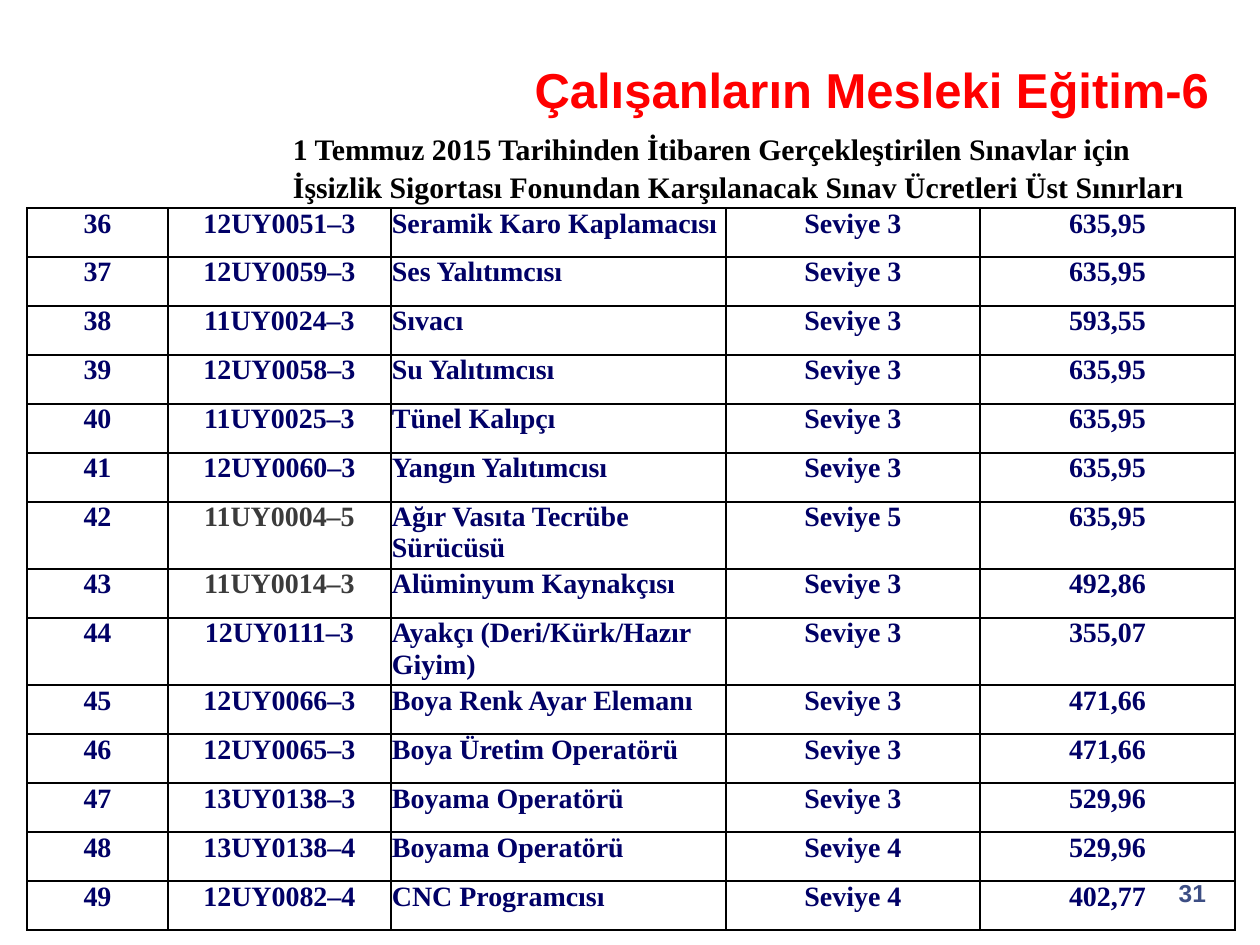
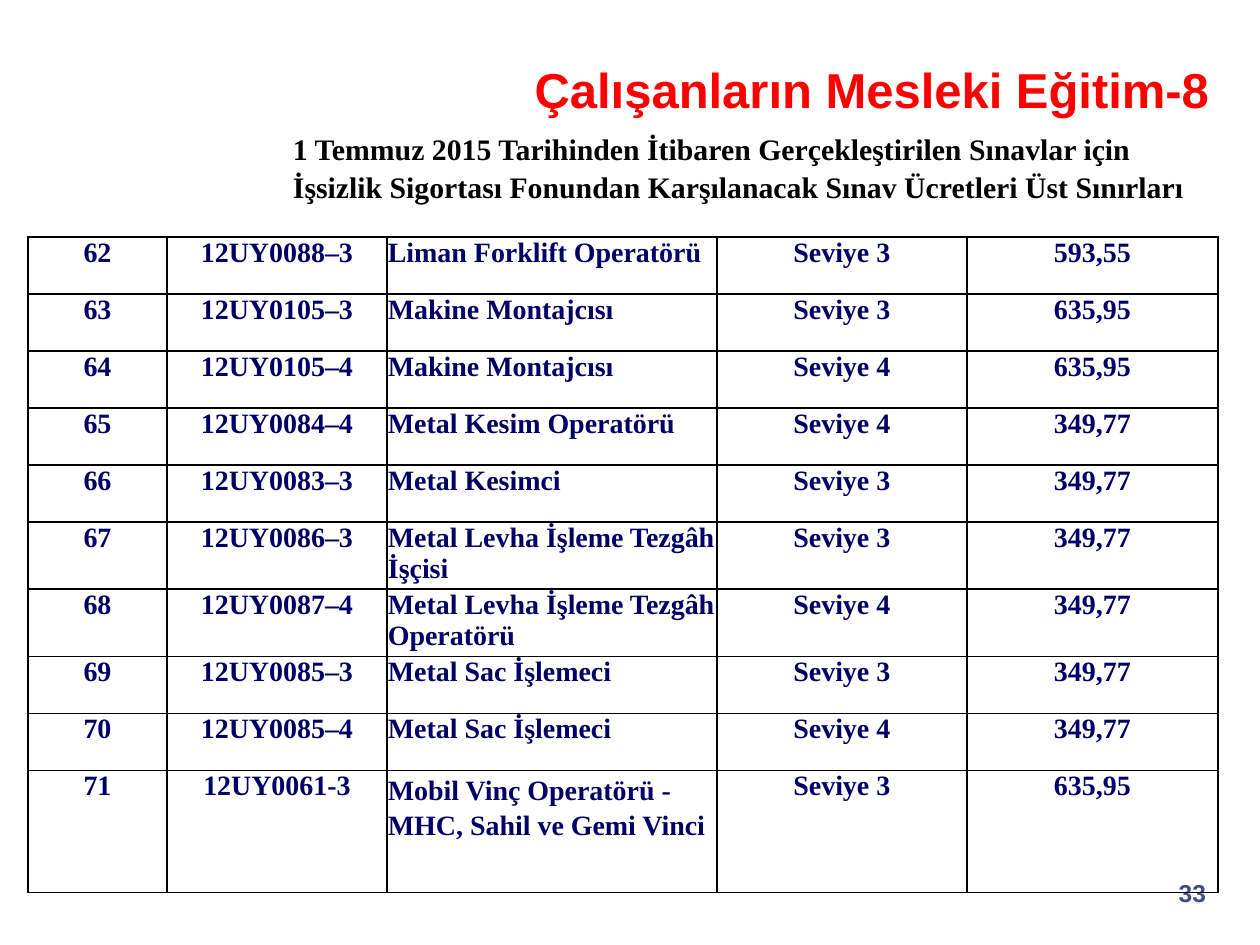
import pptx
import pptx.dml.color
import pptx.enum.text
import pptx.oxml
import pptx.oxml.ns
import pptx.util

RGB = pptx.dml.color.RGBColor
ALIGN = pptx.enum.text.PP_ALIGN
ANCHOR = pptx.enum.text.MSO_ANCHOR

RED = RGB(0xFF, 0x00, 0x00)
BLACK = RGB(0x00, 0x00, 0x00)
NAVY = RGB(0x00, 0x00, 0x66)
GREY = RGB(0x3B, 0x3B, 0x3B)
SLATE = RGB(0x3D, 0x4E, 0x84)

HEADING_FONT = "Arial"
BODY_FONT = "Times New Roman"
PX_PER_INCH = 126
SLIDE_SIZE = (1260, 945)

SUBTITLE = (
    "1 Temmuz 2015 Tarihinden İtibaren Gerçekleştirilen Sınavlar için "
    "İşsizlik Sigortası Fonundan Karşılanacak Sınav Ücretleri Üst Sınırları"
)
GREY_CODES = {"11UY0004–5", "11UY0014–3"}

# Qualification code, occupation, fee limit; the code ends in the level.
FEES_FROM_36 = [
    ("12UY0051–3", "Seramik Karo Kaplamacısı", "635,95"),
    ("12UY0059–3", "Ses Yalıtımcısı", "635,95"),
    ("11UY0024–3", "Sıvacı", "593,55"),
    ("12UY0058–3", "Su Yalıtımcısı", "635,95"),
    ("11UY0025–3", "Tünel Kalıpçı", "635,95"),
    ("12UY0060–3", "Yangın Yalıtımcısı", "635,95"),
    ("11UY0004–5", "Ağır Vasıta Tecrübe Sürücüsü", "635,95"),
    ("11UY0014–3", "Alüminyum Kaynakçısı", "492,86"),
    ("12UY0111–3", "Ayakçı (Deri/Kürk/Hazır Giyim)", "355,07"),
    ("12UY0066–3", "Boya Renk Ayar Elemanı", "471,66"),
    ("12UY0065–3", "Boya Üretim Operatörü", "471,66"),
    ("13UY0138–3", "Boyama Operatörü", "529,96"),
    ("13UY0138–4", "Boyama Operatörü", "529,96"),
    ("12UY0082–4", "CNC Programcısı", "402,77"),
]
FEES_FROM_62 = [
    ("12UY0088–3", "Liman Forklift Operatörü", "593,55"),
    ("12UY0105–3", "Makine Montajcısı", "635,95"),
    ("12UY0105–4", "Makine Montajcısı", "635,95"),
    ("12UY0084–4", "Metal Kesim Operatörü", "349,77"),
    ("12UY0083–3", "Metal Kesimci", "349,77"),
    ("12UY0086–3", "Metal Levha İşleme Tezgâh İşçisi", "349,77"),
    ("12UY0087–4", "Metal Levha İşleme Tezgâh Operatörü", "349,77"),
    ("12UY0085–3", "Metal Sac İşlemeci", "349,77"),
    ("12UY0085–4", "Metal Sac İşlemeci", "349,77"),
    ("12UY0061-3", "Mobil Vinç Operatörü - MHC, Sahil ve Gemi Vinci", "635,95"),
]


def px(length):
    return pptx.util.Emu(round(length * 914400 / PX_PER_INCH))


class Deck:
    """Holds the presentation, its style and the slide being filled."""

    def __init__(self):
        self.prs = pptx.Presentation()
        self.prs.slide_width, self.prs.slide_height = map(px, SLIDE_SIZE)
        self.slide = None

    def new_slide(self, title, number):
        self.slide = self.prs.slides.add_slide(self.prs.slide_layouts[6])
        self.text((427, 53, 808, 71), title, HEADING_FONT, 28, RED, ALIGN.RIGHT,
                  right=26, anchor=ANCHOR.MIDDLE)
        self.text((1147, 872, 72, 63), number, HEADING_FONT, 14, SLATE, ALIGN.RIGHT)
        self.text((164, 123, 1071, 84), SUBTITLE, BODY_FONT, 17, BLACK, ALIGN.LEFT,
                  left=129, spacing=1.05)

    def text(self, box, words, font, size, color, align, left=13, right=13,
             anchor=ANCHOR.TOP, spacing=None):
        frame = self.slide.shapes.add_textbox(*map(px, box)).text_frame
        frame.word_wrap = True
        frame.vertical_anchor = anchor
        frame.margin_left, frame.margin_right = px(left), px(right)
        self.add_words(frame.paragraphs[0], words, font, size, color, align, spacing)

    def add_words(self, paragraph, words, font, size, color, align, spacing=None):
        paragraph.alignment = align
        if spacing:
            paragraph.line_spacing = spacing
        run = paragraph.add_run()
        run.text = words
        run.font.name = font
        run.font.size = pptx.util.Pt(size)
        run.font.bold = True
        run.font.color.rgb = color

    def fee_table(self, left, top, widths, heights, first_number, fees):
        table = self.slide.shapes.add_table(
            len(fees), len(widths), px(left), px(top),
            px(sum(widths)), px(sum(heights))).table
        table.first_row = table.horz_banding = False
        for column, width in zip(table.columns, widths):
            column.width = px(width)
        for row, height in zip(table.rows, heights):
            row.height = px(height)
        for index, (code, occupation, fee) in enumerate(fees):
            entries = (str(first_number + index), code, occupation,
                       f"Seviye {code[-1]}", fee)
            for column, entry in enumerate(entries):
                self.fee_cell(table.cell(index, column), entry, entry == occupation)

    def fee_cell(self, cell, entry, is_occupation):
        cell.margin_left = px(1 if is_occupation else 0)
        cell.margin_right = cell.margin_top = cell.margin_bottom = 0
        self.border(cell)
        cell.fill.background()
        self.add_words(cell.text_frame.paragraphs[0], entry, BODY_FONT, 16,
                       GREY if entry in GREY_CODES else NAVY,
                       ALIGN.LEFT if is_occupation else ALIGN.CENTER,
                       1.15 if entry.startswith("Mobil") else None)

    def border(self, cell):
        properties = cell._tc.get_or_add_tcPr()
        for side in "LRTB":
            properties.append(pptx.oxml.parse_xml(
                f'<a:ln{side} {pptx.oxml.ns.nsdecls("a")} w="{pptx.util.Pt(1)}">'
                f'<a:solidFill><a:srgbClr val="{BLACK}"/></a:solidFill></a:ln{side}>'))


def main():
    deck = Deck()
    deck.new_slide("Çalışanların Mesleki Eğitim-6", "31")
    deck.fee_table(27, 208, [141, 223, 335, 254, 255],
                   [49] * len(FEES_FROM_36), 36, FEES_FROM_36)
    deck.new_slide("Çalışanların Mesleki Eğitim-8", "33")
    deck.fee_table(28, 237, [139, 220, 330, 250, 251],
                   [57] * (len(FEES_FROM_62) - 1) + [122], 62, FEES_FROM_62)
    deck.prs.save("out.pptx")


if __name__ == "__main__":
    main()
